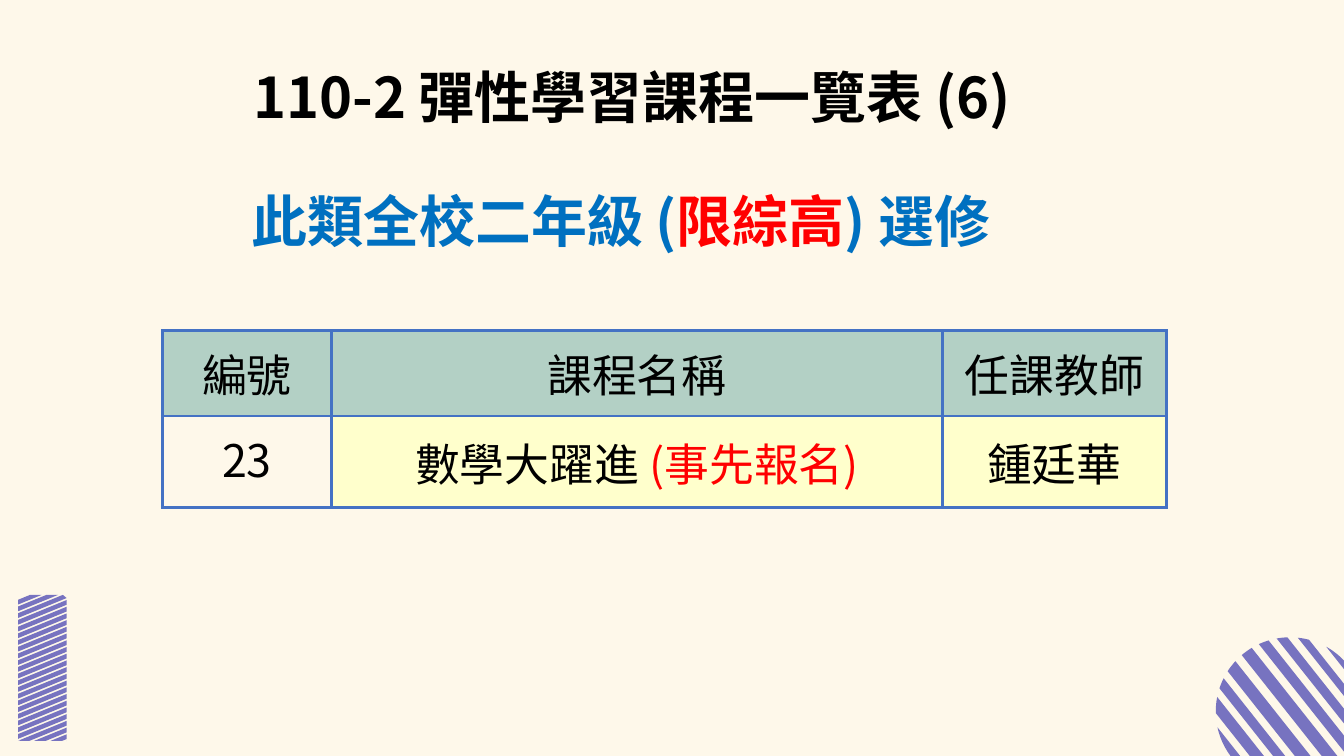
from math import acos, cos, radians, sin

from lxml import etree
from pptx import Presentation
from pptx.dml.color import RGBColor
from pptx.enum.text import MSO_ANCHOR, MSO_AUTO_SIZE, PP_ALIGN
from pptx.oxml.ns import qn
from pptx.util import Cm, Pt

TOP, MIDDLE = MSO_ANCHOR.TOP, MSO_ANCHOR.MIDDLE
CENTER = PP_ALIGN.CENTER
FIXED = MSO_AUTO_SIZE.NONE

CREAM = RGBColor(0xFE, 0xF8, 0xEA)
PURPLE = RGBColor(0x77, 0x73, 0xC0)
GREEN = RGBColor(0xB3, 0xD0, 0xC5)
YELLOW = RGBColor(0xFF, 0xFF, 0xCC)
BLUE = RGBColor(0x00, 0x70, 0xC0)
RED = RGBColor(0xFF, 0x00, 0x00)
BLACK = RGBColor(0x00, 0x00, 0x00)
BORDER = "4472C4"
FONT = "Noto Sans CJK SC"

BANDS = [(-1.87, -1.68), (-1.49, -1.21), (-1.03, -0.79), (-0.6, -0.29), (-0.07, 0.24),
         (0.44, 0.69), (0.88, 1.11), (1.31, 1.5), (1.73, 1.87)]


def write(frame, runs, size=32, bold=False, space=1.0, anchor=MIDDLE, inset=0.25):
    frame.word_wrap = True
    frame.vertical_anchor = anchor
    frame.margin_left = frame.margin_right = Cm(inset)
    frame.margin_top = frame.margin_bottom = Cm(inset)
    para = frame.paragraphs[0]
    para.alignment = CENTER
    para.line_spacing = space
    para.space_before = Pt(0)
    for text, color in runs:
        run = para.add_run()
        run.text = text
        font = run.font
        font.size, font.bold, font.name = Pt(size), bold, FONT
        font.color.rgb = color
        east = etree.SubElement(font._element, qn("a:ea"))
        east.set("typeface", FONT)


def fill_head(shape, box, runs, space):
    shape.left, shape.top, shape.width, shape.height = map(Cm, box)
    write(shape.text_frame, runs, size=40, bold=True, space=space, anchor=TOP)
    shape.text_frame.auto_size = FIXED


def draw(slide, parts):
    parts = [[(Cm(x), Cm(y)) for x, y in part] for part in parts]
    pen = slide.shapes.build_freeform(*parts[0][0])
    for part in parts:
        pen.move_to(*part[0])
        pen.add_line_segments(part[1:], close=True)
    shape = pen.convert_to_shape()
    shape.shadow.inherit = False
    shape.fill.solid()
    shape.fill.fore_color.rgb = PURPLE
    shape.line.fill.background()


def add_disc(slide, box, tilt=51.6, steps=12):
    left, top, size = box
    radius = size / 2
    normal = radians(tilt - 90)

    def point(angle):
        return (left + radius + radius * cos(normal + angle),
                top + radius + radius * sin(normal + angle))

    parts = []
    for low, high in BANDS:
        start, end = acos(low / radius), acos(high / radius)
        arc = [start + (end - start) * i / steps for i in range(steps + 1)]
        parts.append([point(a) for a in arc] + [point(-a) for a in reversed(arc)])
    draw(slide, parts)


def add_strip(slide, box, drop=0.5, thick=0.12):
    left, top, width, height = box
    pitch = height / 21.75

    def edge(end):
        first = max(0, (end + drop - top - height) / drop)
        last = min(1, (end + drop - top) / drop)
        return [(left + width * s, end + drop * (1 - s)) for s in (first, last)]

    parts = []
    for k in range(-3, 22):
        upper = top + 0.13 + k * pitch
        lower = min(upper + thick, top + height)
        parts.append(edge(upper) + edge(lower)[::-1])
    draw(slide, parts)


def add_border(cell):
    props = cell._tc.get_or_add_tcPr()
    for i, side in enumerate(("lnL", "lnR", "lnT", "lnB")):
        line = etree.Element(qn("a:" + side), w=str(Pt(2.25)))
        solid = etree.SubElement(line, qn("a:solidFill"))
        etree.SubElement(solid, qn("a:srgbClr"), val=BORDER)
        props.insert(i, line)


def add_list(slide, box, cols, rows):
    heads = [[(text, BLACK)] for text in ("編號", "課程名稱", "任課教師")]
    course = [[("23", BLACK)],
              [("數學大躍進 ", BLACK), ("(事先報名)", RED)],
              [("鍾廷華", BLACK)]]
    table = slide.shapes.add_table(2, 3, *map(Cm, box)).table
    for col, width in zip(table.columns, cols):
        col.width = Cm(width)
    for row, height in zip(table.rows, rows):
        row.height = Cm(height)
    for r, line in enumerate((heads, course)):
        for c, runs in enumerate(line):
            cell = table.cell(r, c)
            number = r == 1 and c == 0
            if number:
                cell.fill.background()
            else:
                cell.fill.solid()
                cell.fill.fore_color.rgb = YELLOW if r else GREEN
            add_border(cell)
            inset = 0.03 if r and c else 0.25
            write(cell.text_frame, runs, inset=inset)
            cell.margin_left = cell.margin_right = Cm(inset)
            cell.margin_top = cell.margin_bottom = Cm(inset)
            cell.vertical_anchor = TOP if number else MIDDLE


def build(deck):
    slide = deck.slides.add_slide(deck.slide_layouts[0])
    slide.background.fill.solid()
    slide.background.fill.fore_color.rgb = CREAM
    add_disc(slide, (30.64, 16.06, 3.74))
    add_strip(slide, (0.46, 14.99, 1.22, 3.68))
    add_list(slide, (4.09, 8.33, 25.3, 4.46), (4.27, 15.39, 5.64), (2.15, 2.31))
    fill_head(slide.placeholders[1], (1.17, 4.19, 28.96, 2.69),
              [("此類全校二年級 (", BLUE), ("限綜高", RED), (") 選修", BLUE)], 1.15)
    fill_head(slide.shapes.title, (4.09, 1.52, 23.67, 2.31),
              [("110-2 彈性學習課程一覽表 (6)", BLACK)], 0.9)


def main():
    deck = Presentation()
    deck.slide_width, deck.slide_height = Cm(33.87), Cm(19.05)
    build(deck)
    deck.save("out.pptx")


if __name__ == "__main__":
    main()
